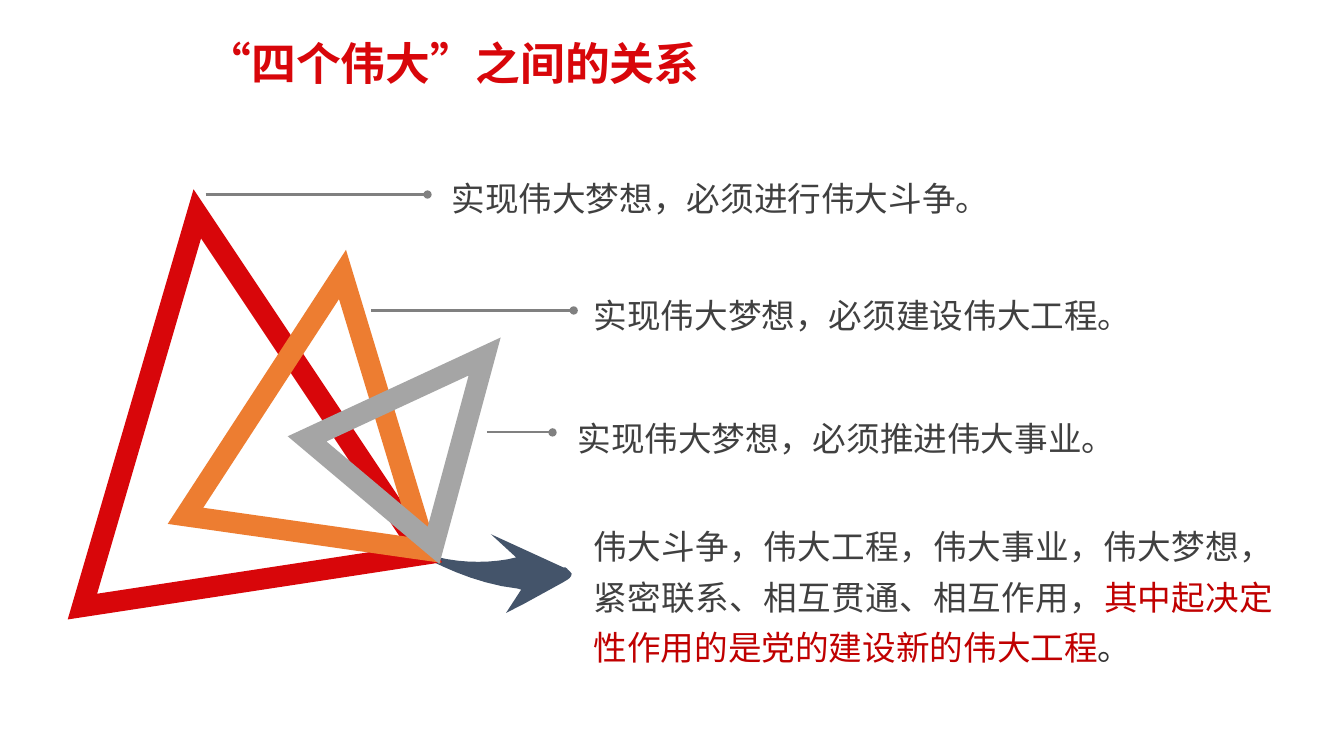
from lxml import etree
from pptx import Presentation
from pptx.dml.color import RGBColor
from pptx.enum.shapes import MSO_CONNECTOR, MSO_SHAPE
from pptx.enum.text import MSO_AUTO_SIZE, PP_ALIGN
from pptx.oxml.ns import qn
from pptx.util import Inches, Pt

STRAIGHT = MSO_CONNECTOR.STRAIGHT
TRIANGLE = MSO_SHAPE.ISOSCELES_TRIANGLE
FIT_SHAPE = MSO_AUTO_SIZE.SHAPE_TO_FIT_TEXT
LEFT, JUSTIFY = PP_ALIGN.LEFT, PP_ALIGN.JUSTIFY

FONT = "Noto Sans CJK SC"
COLORS = {
    "red": "D8060A",
    "orange": "ED7D31",
    "gray": "A5A5A5",
    "navy": "44546A",
    "leader": "808080",
    "text": "404040",
    "emphasis": "C00000",
    "stop": "333333",
}
BLANK_LAYOUT = 6
CURVE_STEPS = 10

TRIANGLES = [
    ((0, 0, 3.43, 3.68), -8.7, "red"),
    ((1.49, 0.61, 2.41, 2.59), 8.1, "orange"),
    ((2.9, 1.23, 1.64, 1.76), 40.1, "gray"),
]
ARROW_START = (1.62, 0.35)
ARROW_PARTS = [
    [(1.64, 0.36), (1.65, 0.38), (1.66, 0.39)],
    [(1.66, 0.41), (1.65, 0.43), (1.62, 0.45)],
    [(1.57, 0.48)],
    [(1.17, 0.7)],
    [(1.01, 0.78)],
    [(1.16, 0.55)],
    [(1.13, 0.54)],
    [(0.58, 0.48), (0.07, 0.16), (0, 0.11)],
    [(0.35, 0.28), (0.72, 0.3), (1.02, 0.25)],
    [(1.11, 0.23)],
    [(0.86, 0)],
    [(1.58, 0.33)],
    [(1.6, 0.33)],
    [(1.61, 0.34), (1.62, 0.34), ARROW_START],
]
CALLOUTS = [
    ((4.38, 1.62, 5.45, 0.56), "实现伟大梦想，必须进行伟大斗争。", 2.04, 4.24, 0.31),
    ((5.79, 2.78, 5.58, 0.61), "实现伟大梦想，必须建设伟大工程。", 3.68, 5.69, 0.3),
    ((5.63, 4, 5.96, 0.61), "实现伟大梦想，必须推进伟大事业。", 4.83, 5.48, 0.29),
]
SUMMARY = [
    ("伟大斗争，伟大工程，伟大事业，伟大梦想，紧密联系、相互贯通、相互作用，", "text"),
    ("其中起决定性作用的是党的建设新的伟大工程", "emphasis"),
    ("。", "stop"),
]


def color(name):
    return RGBColor.from_string(COLORS[name])


def add_text(page, box, spans, size=24, bold=False, spacing=1.25, align=LEFT):
    frame = page.shapes.add_textbox(*map(Inches, box)).text_frame
    frame.word_wrap = True
    frame.auto_size = FIT_SHAPE
    para = frame.paragraphs[0]
    para.alignment = align
    para.line_spacing = spacing
    for text, color_name in spans:
        span = para.add_run()
        span.text = text
        span.font.size = Pt(size)
        span.font.bold = bold
        span.font.name = FONT
        span.font.color.rgb = color(color_name)
        properties = span.font._element
        properties.set("lang", "zh-CN")
        etree.SubElement(properties, qn("a:ea"), typeface=FONT)


def add_title(page, box):
    add_text(page, box, [("“四个伟大”之间的关系", "red")], size=32, bold=True, spacing=1.0)


def add_triangles(page, box):
    left, top = box[:2]
    for (x, y, width, height), angle, color_name in TRIANGLES:
        place = map(Inches, (left + x, top + y, width, height))
        triangle = page.shapes.add_shape(TRIANGLE, *place)
        triangle.rotation = angle
        triangle.shadow.inherit = False
        triangle.fill.background()
        triangle.line.color.rgb = color(color_name)
        triangle.line.width = Pt(15)
        outline = triangle.line._get_or_add_ln()
        etree.SubElement(outline, qn("a:miter"), lim="800000")


def curve_points(start, first, second, end):
    points = []
    for step in range(1, CURVE_STEPS + 1):
        t = step / CURVE_STEPS
        weights = ((1 - t) ** 3, 3 * t * (1 - t) ** 2, 3 * t * t * (1 - t), t ** 3)
        corners = (start, first, second, end)
        points.append(tuple(
            sum(weight * corner[axis] for weight, corner in zip(weights, corners))
            for axis in (0, 1)
        ))
    return points


def add_arrow(page, box):
    left, top = box[:2]
    points = [ARROW_START]
    for part in ARROW_PARTS:
        points += curve_points(points[-1], *part) if len(part) == 3 else part
    places = [(Inches(left + x), Inches(top + y)) for x, y in points]
    builder = page.shapes.build_freeform(*places[0])
    builder.add_line_segments(places[1:], close=True)
    arrow = builder.convert_to_shape()
    arrow.shadow.inherit = False
    arrow.fill.solid()
    arrow.fill.fore_color.rgb = color("navy")
    arrow.line.fill.background()


def add_callout(page, box, text, start, end, drop):
    add_text(page, box, [(text, "text")])
    y = Inches(box[1] + drop)
    leader = page.shapes.add_connector(STRAIGHT, Inches(start), y, Inches(end), y)
    leader.line.color.rgb = color("leader")
    leader.line.width = Pt(1.5)
    etree.SubElement(leader.line._get_or_add_ln(), qn("a:tailEnd"), type="oval")
    etree.SubElement(leader._element.spPr, qn("a:effectLst"))


def add_summary(page, box):
    add_text(page, box, SUMMARY, align=JUSTIFY)


def main():
    deck = Presentation()
    deck.slide_width, deck.slide_height = Inches(13.33), Inches(7.5)
    page = deck.slides.add_slide(deck.slide_layouts[BLANK_LAYOUT])
    add_arrow(page, (4.01, 5.3, 1.66, 0.78))
    add_triangles(page, (0.52, 2.1, 4.54, 3.68))
    for callout in CALLOUTS:
        add_callout(page, *callout)
    add_summary(page, (5.79, 5.07, 6.94, 1.62))
    add_title(page, (1.95, 0.31, 5.25, 0.64))
    deck.save("out.pptx")


if __name__ == "__main__":
    main()
